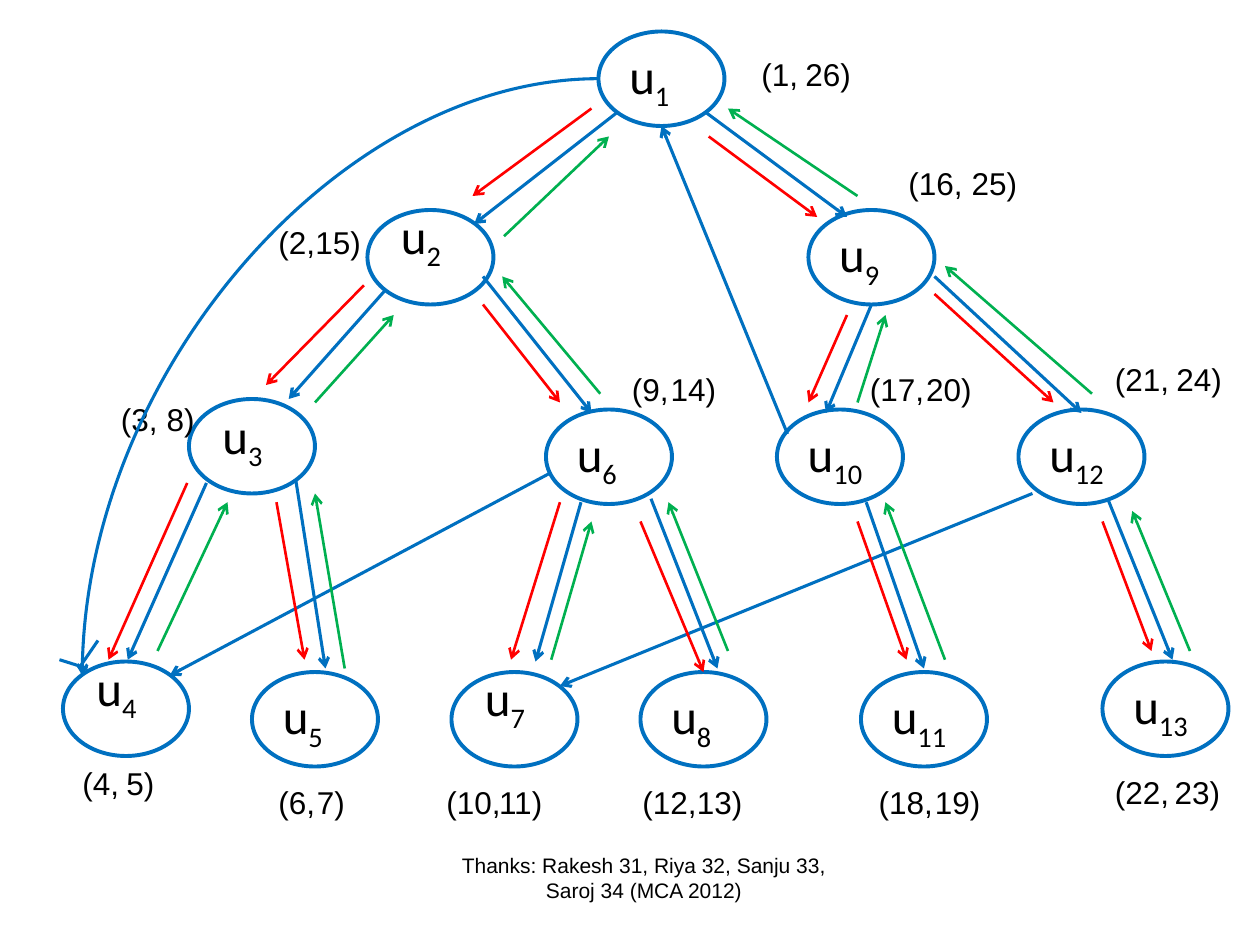
import pptx
import pptx.dml.color
import pptx.enum.shapes
import pptx.enum.text
import pptx.oxml.ns
import pptx.util
from lxml import etree

Pt = pptx.util.Pt
COLORS = {"tree": "0070C0", "descend": "FF0000", "return": "00B050", "text": "000000", "node": "FFFFFF"}
NODE_SIZE = (72, 54)
SPACE_WIDTH = 5

NODES = [
    ("1", 342, 18), ("2", 210, 120), ("3", 108, 228), ("4", 36, 378), ("9", 462, 120),
    ("6", 312, 234), ("5", 144, 384), ("7", 258, 384), ("8", 366, 384), ("10", 444, 234),
    ("11", 492, 384), ("12", 582, 234), ("13", 630, 378),
]
RAISED_NAMES = {"2": (222, 114, 66), "3": (120, 228, 90), "4": (48, 372, 66), "7": (270, 378, 72)}

EDGES = {
    "tree": [
        (353, 64, 271, 128), (220, 166, 165, 228), (118, 276, 73, 377), (169, 274, 186, 382),
        (276, 158, 338, 236), (403, 64, 484, 124), (498, 174, 472, 236), (534, 158, 618, 236),
        (315, 270, 97, 386), (332, 287, 306, 378), (372, 285, 410, 382), (495, 287, 528, 382),
        (633, 285, 670, 377), (590, 282, 320, 392), (450, 248, 378, 72),
    ],
    "descend": [
        (338, 62, 270, 112), (208, 163, 152, 220), (107, 276, 62, 377), (158, 287, 174, 377),
        (276, 174, 320, 230), (320, 287, 292, 377), (366, 298, 402, 384), (405, 78, 467, 124),
        (484, 180, 462, 230), (490, 298, 518, 377), (534, 168, 602, 230), (630, 298, 658, 372),
    ],
    "return": [
        (90, 372, 130, 287), (197, 382, 180, 282), (180, 230, 225, 180), (315, 377, 338, 298),
        (416, 372, 382, 287), (343, 225, 287, 158), (288, 135, 348, 78), (540, 377, 506, 287),
        (490, 230, 506, 180), (680, 372, 647, 292), (624, 225, 540, 152), (490, 112, 416, 62),
    ],
}
EDGE_WIDTHS = {"tree": 1.75, "descend": 1.5, "return": 1.5}
BACK_EDGE = (47, 45, 342, 386)
BACK_EDGE_HEAD = [(34, 377, 50, 382), (45, 382, 56, 366)]

VISIT_TIMES = [
    ("(1,", 428, 73, "26)", 428, 90, 5, 28), ("(2,", 152, 68, "15)", 168, 73, 1, 124),
    ("(3,", 62, 68, "8)", 78, 50, 2, 225), ("(4,", 40, 78, "5)", 50, 90, 3, 433),
    ("(6,", 152, 62, "7)", 174, 73, 0, 444), ("(9,", 354, 90, "14)", 366, 68, 2, 208),
    ("(10,", 248, 78, "11)", 258, 66, 4, 444), ("(12,", 360, 73, "13)", 366, 84, 5, 444),
    ("(16,", 512, 84, "25)", 523, 96, 5, 90), ("(17,", 490, 84, "20)", 462, 118, 12, 208),
    ("(18,", 495, 73, "19)", 472, 118, 11, 444), ("(21,", 630, 73, "24)", 630, 90, 7, 202),
    ("(22,", 630, 90, "23)", 624, 96, 8, 438),
]


def color(name):
    """Return the named colour."""
    return pptx.dml.color.RGBColor.from_string(COLORS[name])


def style_span(span, font, size):
    """Set font, size and text colour of a run."""
    span.font.name = font
    span.font.size = Pt(size)
    span.font.color.rgb = color("text")


def add_text_box(slide, left, top, width, height):
    """Add a wrapping text box that grows with its text."""
    box = slide.shapes.add_textbox(Pt(left), Pt(top), Pt(width), Pt(height))
    box.text_frame.word_wrap = True
    box.text_frame.auto_size = pptx.enum.text.MSO_AUTO_SIZE.SHAPE_TO_FIT_TEXT
    return box


def write_node_name(frame, number):
    """Write u with the node number as a subscript."""
    para = frame.paragraphs[0]
    para.alignment = pptx.enum.text.PP_ALIGN.LEFT
    for text in ("u", number):
        span = para.add_run()
        span.text = text
        style_span(span, "Calibri", 28)
    span.font._element.set("baseline", "-25000")


def draw_nodes(slide, box):
    """Draw the ellipses and their names inside the box."""
    left, top = box[:2]
    for number, x, y in NODES:
        node = slide.shapes.add_shape(
            pptx.enum.shapes.MSO_SHAPE.OVAL, Pt(left + x), Pt(top + y), *map(Pt, NODE_SIZE))
        node.shadow.inherit = False
        node.fill.solid()
        node.fill.fore_color.rgb = color("node")
        node.line.color.rgb = color("tree")
        node.line.width = Pt(2.25)
        if number not in RAISED_NAMES:
            node.text_frame.vertical_anchor = pptx.enum.text.MSO_ANCHOR.MIDDLE
            write_node_name(node.text_frame, number)
    for number, (x, y, width) in RAISED_NAMES.items():
        write_node_name(add_text_box(slide, left + x, top + y, width, 41).text_frame, number)


def add_edge(slide, box, ends, kind, curved=False, arrow=True):
    """Add one connector of the given kind between two points of the box."""
    left, top = box[:2]
    x1, y1, x2, y2 = ends
    connector_type = pptx.enum.shapes.MSO_CONNECTOR
    edge = slide.shapes.add_connector(
        connector_type.CURVE if curved else connector_type.STRAIGHT,
        Pt(left + x1), Pt(top + y1), Pt(left + x2), Pt(top + y2))
    edge.line.color.rgb = color(kind)
    edge.line.width = Pt(EDGE_WIDTHS[kind])
    if arrow:
        etree.SubElement(edge.line._get_or_add_ln(), pptx.oxml.ns.qn("a:tailEnd"), type="arrow")
    etree.SubElement(edge._element.spPr, pptx.oxml.ns.qn("a:effectLst"))
    return edge


def draw_edges(slide, box):
    """Draw the tree edges and the descending and returning arrows."""
    for kind, edges in EDGES.items():
        for ends in edges:
            add_edge(slide, box, ends, kind)


def draw_back_edge(slide, box):
    """Draw the curved edge from the root to the fourth node."""
    curve = add_edge(slide, box, BACK_EDGE, "tree", curved=True)
    properties = curve._element.spPr
    properties.find(pptx.oxml.ns.qn("a:prstGeom")).set("prst", "curvedConnector2")
    frame = properties.find(pptx.oxml.ns.qn("a:xfrm"))
    frame.set("rot", "10800000")
    frame.set("flipV", "1")
    for ends in BACK_EDGE_HEAD:
        add_edge(slide, box, ends, "tree", arrow=False)


def draw_visit_times(slide, box):
    """Write the start and finish time of every node."""
    left, top = box[:2]
    for start, start_x, start_width, finish, finish_x, finish_width, spaces, y in VISIT_TIMES:
        for text, x, width, indent in (
                (start, start_x, start_width, 0), (finish, finish_x, finish_width, spaces)):
            frame = add_text_box(slide, left + x, top + y, width, 29).text_frame
            frame.margin_left = Pt(7.2 + indent * SPACE_WIDTH)
            frame.text = text
            style_span(frame.paragraphs[0].runs[0], "Arial", 18)


def draw_credit(slide, box):
    """Write the centred line of thanks in the box."""
    frame = slide.shapes.add_textbox(*map(Pt, box)).text_frame
    frame.word_wrap = True
    frame.vertical_anchor = pptx.enum.text.MSO_ANCHOR.MIDDLE
    frame.text = "Thanks: Rakesh 31, Riya 32, Sanju 33, Saroj 34 (MCA 2012)"
    para = frame.paragraphs[0]
    para.alignment = pptx.enum.text.PP_ALIGN.CENTER
    style_span(para.runs[0], "Arial", 12)


def main():
    """Build and save the deck."""
    deck = pptx.Presentation()
    deck.slide_width, deck.slide_height = Pt(720), Pt(540)
    slide = deck.slides.add_slide(deck.slide_layouts[6])
    tree_box = (0, 0, 720, 480)
    draw_nodes(slide, tree_box)
    draw_credit(slide, (253, 480, 230, 43))
    draw_edges(slide, tree_box)
    draw_visit_times(slide, tree_box)
    draw_back_edge(slide, tree_box)
    deck.save("out.pptx")


if __name__ == "__main__":
    main()
